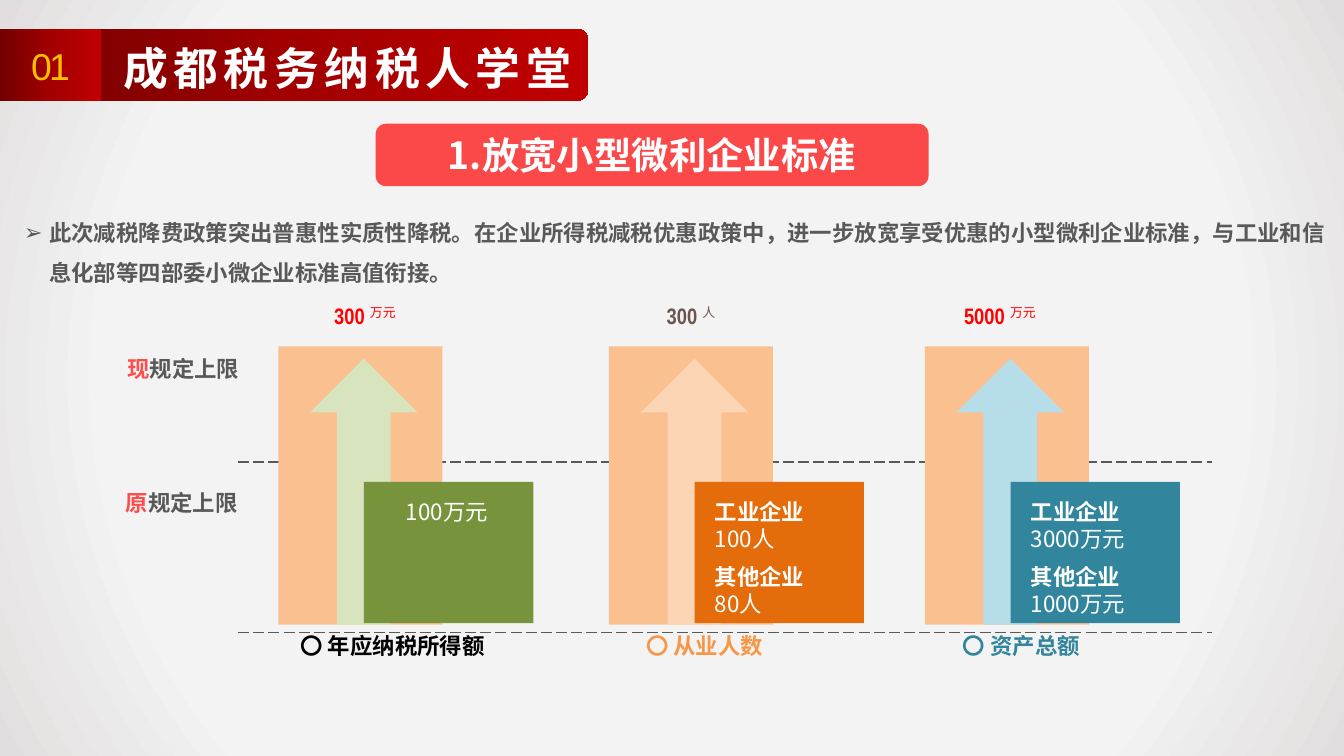
from lxml import etree
from pptx import Presentation
from pptx.dml.color import RGBColor
from pptx.enum import dml, shapes, text
from pptx.oxml import parse_xml
from pptx.oxml.ns import nsdecls, qn
from pptx.util import Cm, Pt

CJK = "Noto Sans CJK SC"
WHITE = RGBColor(0xFF, 0xFF, 0xFF)
BLACK = RGBColor(0, 0, 0)
GREY = RGBColor(0x59, 0x59, 0x59)
BROWN = RGBColor(0x6A, 0x56, 0x50)
RED = RGBColor(0xFF, 0, 0)
CORAL = RGBColor(0xFF, 0x4C, 0x4C)
GOLD = RGBColor(0xFF, 0xC0, 0)
PEACH = RGBColor(0xFA, 0xC0, 0x90)
PALE_GREEN = RGBColor(0xD7, 0xE4, 0xBD)
PALE_ORANGE = RGBColor(0xFC, 0xD5, 0xB5)
PALE_BLUE = RGBColor(0xB7, 0xDE, 0xE8)
GREEN = RGBColor(0x77, 0x93, 0x3C)
ORANGE = RGBColor(0xE4, 0x6C, 0x0A)
LIGHT_ORANGE = RGBColor(0xF7, 0x96, 0x46)
TEAL = RGBColor(0x31, 0x85, 0x9C)
BACKDROP = [(0, "F5F5F5"), (73, "F3F3F3"), (100, "E2DEDF")]
DARK_REDS = [(0, "720000"), (50, "A20000"), (100, "C00000")]

# Content (positions in cm)
TITLE = "成都税务纳税人学堂"
HEADING = "1.放宽小型微利企业标准"
INTRO = ("此次减税降费政策突出普惠性实质性降税。在企业所得税减税优惠政策中，"
         "进一步放宽享受优惠的小型微利企业标准，与工业和信息化部等四部委小微企业标准高值衔接。")
LIMITS = [("现", 2.16, 6.58), ("原", 2.13, 9.12)]
COLUMNS = [
    dict(left=5.26, number="300 ", unit="万元", number_color=RED, number_mid=6.9,
         arrow=PALE_GREEN, box=GREEN, old=[("", "100万元")],
         label="〇 年应纳税所得额", label_left=5.43, label_color=BLACK),
    dict(left=11.51, number="300 ", unit="人", number_color=BROWN, number_mid=13.06,
         arrow=PALE_ORANGE, box=ORANGE, old=[("工业企业", "100人"), ("其他企业", "80人")],
         label="〇 从业人数", label_left=11.96, label_color=LIGHT_ORANGE),
    dict(left=17.48, number="5000 ", unit="万元", number_color=RED, number_mid=18.9,
         arrow=PALE_BLUE, box=TEAL, old=[("工业企业", "3000万元"), ("其他企业", "1000万元")],
         label="〇 资产总额", label_left=17.95, label_color=TEAL),
]

prs = Presentation()
prs.slide_width, prs.slide_height = Cm(25.4), Cm(14.29)
s = prs.slides.add_slide(prs.slide_layouts[6])


def add_block(kind, x, y, w, h, color=None):
    sp = s.shapes.add_shape(kind, Cm(x), Cm(y), Cm(w), Cm(h))
    sp.shadow.inherit = False
    sp.line.fill.background()
    if color is not None:
        sp.fill.solid()
        sp.fill.fore_color.rgb = color
    return sp


def add_gradient(sp, stops, direction):
    sp.fill.gradient()
    old = sp.element.spPr.find(qn("a:gradFill"))
    gs = "".join(f'<a:gs pos="{pos * 1000}"><a:srgbClr val="{c}"/></a:gs>' for pos, c in stops)
    new = parse_xml(f'<a:gradFill {nsdecls("a")} rotWithShape="1"><a:gsLst>{gs}</a:gsLst>'
                    f'{direction}</a:gradFill>')
    old.getparent().replace(old, new)


def add_box(x, y, w, h):
    tf = s.shapes.add_textbox(Cm(x), Cm(y), Cm(w), Cm(h)).text_frame
    tf.word_wrap = True
    return tf


def add_run(p, words, size=12, font=CJK, color=WHITE, bold=False, spacing=None, raised=None):
    r = p.add_run()
    r.text = words
    r.font.size, r.font.name, r.font.bold = Pt(size), font, bold
    r.font.color.rgb = color
    rpr = r.font._element
    etree.SubElement(rpr, qn("a:ea")).set("typeface", font)
    if spacing is not None:
        rpr.set("spc", str(int(spacing * 100)))
    if raised is not None:
        rpr.set("baseline", str(raised * 1000))
    return r


# Backdrop and header band
CIRCLE = ('<a:path path="circle"><a:fillToRect l="50000" t="50000" r="50000" b="50000"/>'
          '</a:path>')
ACROSS = '<a:lin ang="0" scaled="0"/>'
RECT = shapes.MSO_SHAPE.RECTANGLE
add_gradient(add_block(RECT, 0, 0, 25.4, 14.29), BACKDROP, CIRCLE)
add_gradient(add_block(shapes.MSO_SHAPE.ROUNDED_RECTANGLE, 0.02, 0.54, 11.1, 1.37),
             DARK_REDS, ACROSS)
add_gradient(add_block(RECT, 0, 0.54, 1.91, 1.37), DARK_REDS, ACROSS)
tf = add_box(0, 0.56, 1.91, 1.35)
tf.vertical_anchor = text.MSO_ANCHOR.MIDDLE
tf.paragraphs[0].alignment = text.PP_ALIGN.CENTER
add_run(tf.paragraphs[0], "01", size=20, font="Arial", color=GOLD, spacing=-1.5)
p = add_box(2.08, 0.64, 13.77, 1.3).paragraphs[0]
p.line_spacing = Pt(28.8)
add_run(p, TITLE, size=24, bold=True, spacing=3)

# Dashed level lines
for y in (8.73, 11.95):
    ln = s.shapes.add_connector(shapes.MSO_CONNECTOR.STRAIGHT, Cm(4.5), Cm(y), Cm(22.9), Cm(y))
    ln.line.color.rgb = GREY
    ln.line.width = Pt(0.75)
    ln.line.dash_style = dml.MSO_LINE.LONG_DASH
    etree.SubElement(ln.element.spPr, qn("a:effectLst"))

# Three columns: bar, arrow, old limit, new limit, label
for col in COLUMNS:
    x = col["left"]
    add_block(RECT, x, 6.55, 3.1, 5.26, PEACH)
    add_block(shapes.MSO_SHAPE.UP_ARROW, x + 0.6, 6.78, 2.03, 5.03, col["arrow"])
    add_block(RECT, x + 1.62, 9.11, 3.2, 2.67, col["box"])

    p = add_box(col["number_mid"] - 1.95, 5.58, 3.9, 0.58).paragraphs[0]
    p.alignment = text.PP_ALIGN.CENTER
    p.line_spacing = Pt(14.4)
    add_run(p, col["number"], font="Arial Narrow", color=col["number_color"], bold=True)
    add_run(p, col["unit"], color=col["number_color"], raised=30)

    tf = add_box(x + 1.75, 9.3, 2.87, 1.88)
    lines = [(words, i == 0) for pair in col["old"] for i, words in enumerate(pair) if words]
    for n, (words, bold) in enumerate(lines):
        p = tf.paragraphs[0] if n == 0 else tf.add_paragraph()
        p.line_spacing = Pt(14.4)
        p.space_after = Pt(0 if bold else 6)
        if len(lines) == 1:
            p.alignment = text.PP_ALIGN.CENTER
        add_run(p, words, bold=bold)

    p = add_box(col["label_left"], 11.83, 4.8, 0.57).paragraphs[0]
    p.line_spacing = Pt(14.4)
    add_run(p, col["label"], color=col["label_color"], bold=True)

# Row labels
for first, x, y in LIMITS:
    p = add_box(x, y, 3.1, 0.57).paragraphs[0]
    p.line_spacing = Pt(14.4)
    add_run(p, first, color=CORAL, bold=True)
    add_run(p, "规定上限", color=GREY, bold=True)

# Introduction with arrow bullet
p = add_box(0.2, 3.76, 25.2, 1.78).paragraphs[0]
p.line_spacing = Pt(21.6)
ppr = p._p.get_or_add_pPr()
ppr.set("marL", str(Cm(0.48)))
ppr.set("indent", str(-Cm(0.48)))
etree.SubElement(ppr, qn("a:buFont")).set("typeface", "Arial")
etree.SubElement(ppr, qn("a:buChar")).set("char", "➢")
add_run(p, INTRO, color=GREY, bold=True)

# Section heading
sp = add_block(shapes.MSO_SHAPE.FLOWCHART_ALTERNATE_PROCESS, 7.1, 2.34, 10.45, 1.18, RED)
fill_color = sp.element.spPr.find(qn("a:solidFill"))[0]
etree.SubElement(fill_color, qn("a:alpha")).set("val", "70000")
sp.text_frame.vertical_anchor = text.MSO_ANCHOR.MIDDLE
sp.text_frame.paragraphs[0].alignment = text.PP_ALIGN.CENTER
add_run(sp.text_frame.paragraphs[0], HEADING, size=20, bold=True)

prs.save("out.pptx")
